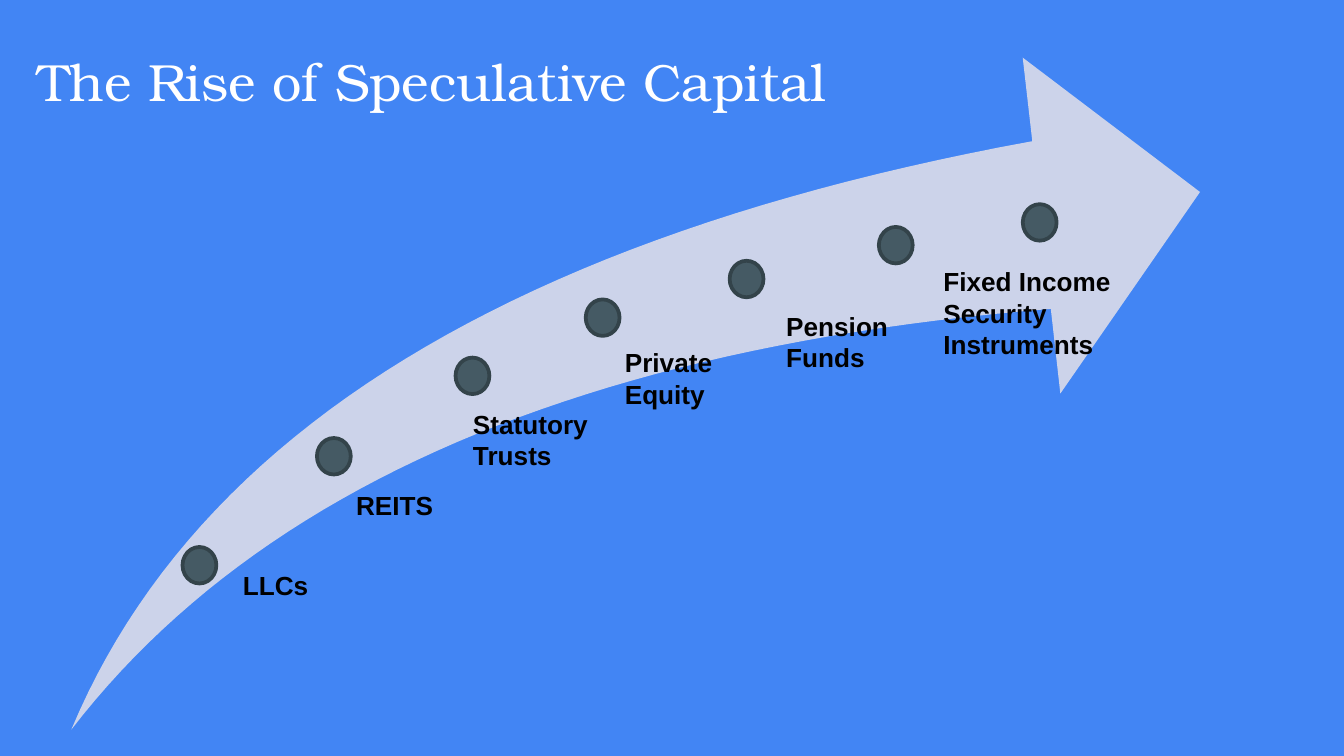
from typing import NamedTuple

from pptx import Presentation
from pptx.dml.color import RGBColor
from pptx.enum.shapes import MSO_SHAPE
from pptx.enum.text import MSO_ANCHOR, PP_ALIGN
from pptx.util import Cm, Pt

COLORS = {
    "back": "4285F4",
    "arrow": "CCD3EA",
    "dot": "455A64",
    "rim": "33434A",
    "title": "FFFFFF",
    "label": "000000",
}


class Point(NamedTuple):
    x: float
    y: float


class Label(NamedTuple):
    lines: tuple[str, ...]
    x: float
    y: float
    width: float
    height: float


# Arrow outline: two curves joined by the head
TAIL = Point(1.35, 13.79)
UPPER = (TAIL, Point(3.71, 8.15), Point(9.78, 4.45), Point(19.51, 2.67))
HEAD = [Point(19.33, 1.09), Point(22.68, 3.63), Point(20.04, 7.44)]
LOWER = (Point(19.86, 5.84), Point(11.07, 6.55), Point(4.9, 9.19), TAIL)
STEPS = 48

DOTS = [
    Point(3.45, 10.34),
    Point(5.99, 8.28),
    Point(8.61, 6.76),
    Point(11.07, 5.66),
    Point(13.79, 4.93),
    Point(16.61, 4.29),
    Point(19.33, 3.86),
]

LABELS = [
    Label(("LLCs",), 4.34, 10.64, 2.95, 0.86),
    Label(("REITS",), 6.48, 9.12, 2.36, 0.86),
    Label(("Statutory Trusts",), 8.69, 7.59, 2.72, 2.06),
    Label(("Private", "Equity"), 11.56, 6.43, 3.91, 1.45),
    Label(("Pension Funds",), 14.61, 5.74, 3.56, 1.45),
    Label(("Fixed Income Security Instruments",), 17.58, 4.9, 5.36, 2.06),
]


def color(key: str) -> RGBColor:
    return RGBColor.from_string(COLORS[key])


def paint(shape, key: str) -> None:
    shape.shadow.inherit = False
    shape.fill.solid()
    shape.fill.fore_color.rgb = color(key)


def style(para, face: str, size: float, key: str, bold: bool) -> None:
    para.alignment = PP_ALIGN.LEFT
    para.font.name = face
    para.font.size = Pt(size)
    para.font.bold = bold
    para.font.color.rgb = color(key)


def curve(ends: tuple[Point, ...]) -> list[Point]:
    """Sample a cubic Bezier curve."""
    points = []
    for step in range(STEPS + 1):
        t = step / STEPS
        u = 1 - t
        parts = (u**3, 3 * u * u * t, 3 * u * t * t, t**3)
        points.append(Point(
            sum(w * p.x for w, p in zip(parts, ends)),
            sum(w * p.y for w, p in zip(parts, ends)),
        ))
    return points


def add_title(slide, text: str) -> None:
    title = slide.shapes.title
    title.left, title.top = Cm(0.46), Cm(0.51)
    title.width, title.height = Cm(22.53), Cm(1.85)
    frame = title.text_frame
    frame.text = text
    frame.vertical_anchor = MSO_ANCHOR.BOTTOM
    frame.margin_left = frame.margin_right = Cm(0.25)
    frame.margin_top = frame.margin_bottom = Cm(0.25)
    style(frame.paragraphs[0], "TeX Gyre Bonum", 28, "title", False)


def add_arrow(slide) -> None:
    path = [(Cm(p.x), Cm(p.y)) for p in curve(UPPER) + HEAD + curve(LOWER)]
    pen = slide.shapes.build_freeform(*path[0])
    pen.add_line_segments(path[1:], close=True)
    arrow = pen.convert_to_shape()
    paint(arrow, "arrow")
    arrow.line.fill.background()


def add_dot(slide, spot: Point) -> None:
    dot = slide.shapes.add_shape(
        MSO_SHAPE.OVAL, Cm(spot.x), Cm(spot.y), Cm(0.64), Cm(0.69))
    paint(dot, "dot")
    dot.line.color.rgb = color("rim")
    dot.line.width = Pt(2)


def add_label(slide, label: Label) -> None:
    box = slide.shapes.add_textbox(
        Cm(label.x), Cm(label.y), Cm(label.width), Cm(label.height))
    frame = box.text_frame
    frame.word_wrap = True
    frame.text = "\n".join(label.lines)
    for para in frame.paragraphs:
        style(para, "Arial", 14, "label", True)


def main() -> None:
    deck = Presentation()
    deck.slide_width, deck.slide_height = Cm(25.4), Cm(14.29)
    slide = deck.slides.add_slide(deck.slide_layouts[5])
    slide.background.fill.solid()
    slide.background.fill.fore_color.rgb = color("back")

    # Title and rising arrow
    add_title(slide, "The Rise of Speculative Capital")
    add_arrow(slide)

    # Milestones along the arrow
    for spot in DOTS:
        add_dot(slide, spot)
    for label in LABELS:
        add_label(slide, label)

    deck.save("out.pptx")


if __name__ == "__main__":
    main()
